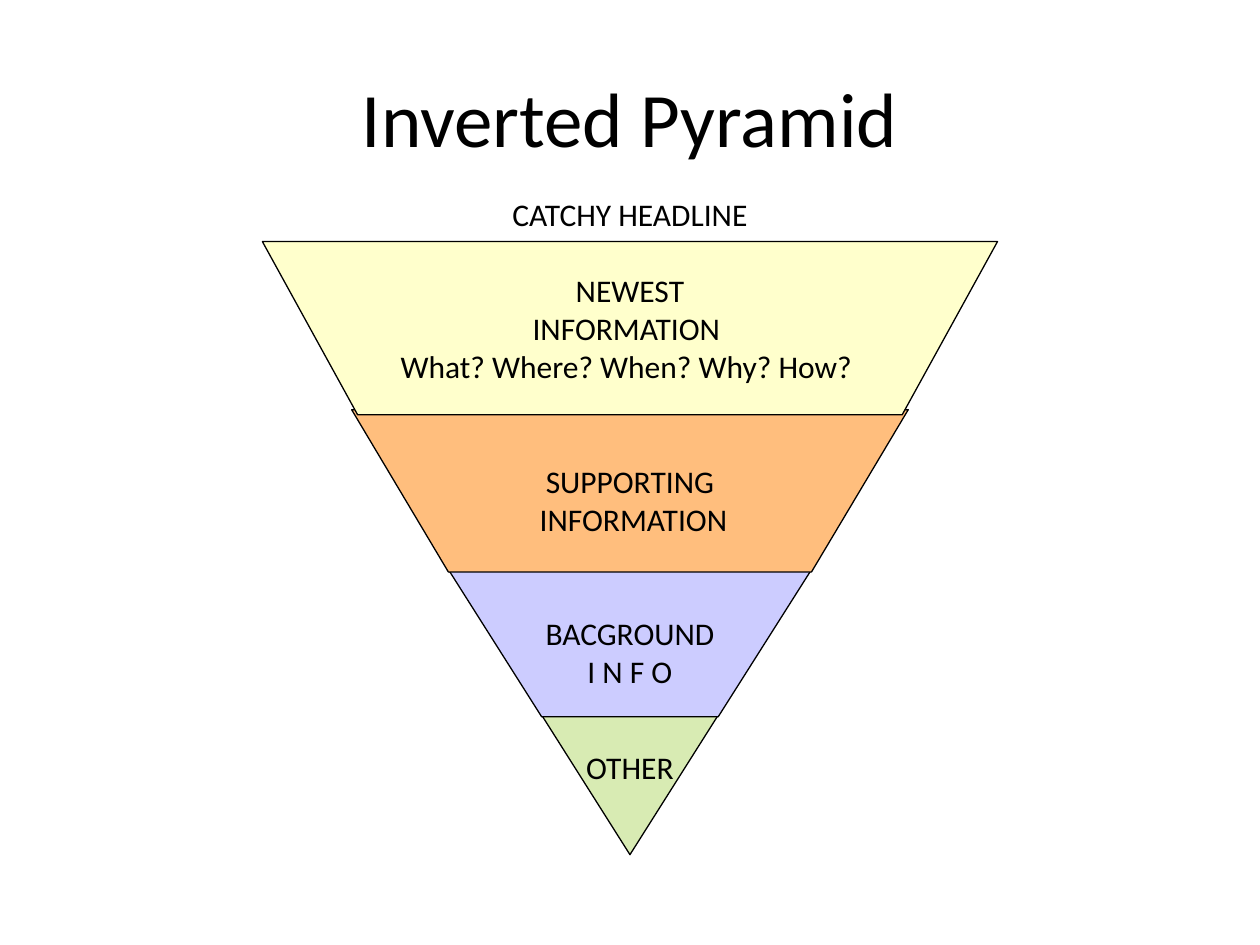
"""Build the Inverted Pyramid slide: four stacked bands under a headline."""
from dataclasses import dataclass

import pptx
import pptx.dml.color
import pptx.enum.text
import pptx.util

Cm = pptx.util.Cm
Pt = pptx.util.Pt
CENTRE = 12.7


@dataclass(frozen=True)
class Band:
    top: float
    bottom: float
    half_top: float
    half_bottom: float
    colour: str


@dataclass(frozen=True)
class Line:
    text: str
    size: float = 18
    gap: float = 0


BANDS = [
    Band(14.4, 17.23, 1.79, 0, "D8EBB3"),
    Band(11.23, 14.45, 3.82, 1.78, "CCCCFF"),
    Band(8.26, 11.53, 5.61, 3.66, "FFBE7D"),
    Band(4.87, 8.36, 7.41, 5.49, "FFFFCC"),
]

LABELS = [
    Line("CATCHY HEADLINE"),
    Line("NEWEST", gap=22),
    Line("INFORMATION "),
    Line("What? Where? When? Why? How? "),
    Line("SUPPORTING", gap=44),
    Line(" INFORMATION"),
    Line("BACGROUND", gap=44),
    Line("I N F O"),
    Line("OTHER", gap=33),
]


def rgb(colour: str) -> pptx.dml.color.RGBColor:
    return pptx.dml.color.RGBColor.from_string(colour)


def draw_band(slide, band: Band) -> None:
    corners = [
        (Cm(CENTRE + offset), Cm(height))
        for offset, height in (
            (-band.half_top, band.top),
            (band.half_top, band.top),
            (band.half_bottom, band.bottom),
            (-band.half_bottom, band.bottom),
        )
    ]
    outline = slide.shapes.build_freeform(*corners[0], scale=1.0)
    outline.add_line_segments(corners[1:], close=True)
    layer = outline.convert_to_shape()
    layer.shadow.inherit = False
    layer.fill.solid()
    layer.fill.fore_color.rgb = rgb(band.colour)
    layer.line.color.rgb = rgb("000000")
    layer.line.width = Pt(0.75)


def draw_text(slide, left: float, top: float, width: float, height: float,
              lines: list[Line], frame_format: dict) -> None:
    frame = slide.shapes.add_textbox(Cm(left), Cm(top), Cm(width), Cm(height)).text_frame
    for name, value in {"word_wrap": True, **frame_format}.items():
        setattr(frame, name, value)
    for index, line in enumerate(lines):
        paragraph = frame.add_paragraph() if index else frame.paragraphs[0]
        paragraph.alignment = pptx.enum.text.PP_ALIGN.CENTER
        if line.gap:
            paragraph.space_before = Pt(line.gap)
        words = paragraph.add_run()
        words.text = line.text
        for name, value in {"name": "Calibri", "size": Pt(line.size)}.items():
            setattr(words.font, name, value)
        words.font.color.rgb = rgb("000000")


def main() -> None:
    deck = pptx.Presentation()
    deck.slide_width, deck.slide_height = Cm(25.4), Cm(19.05)
    slide = deck.slides.add_slide(deck.slide_layouts[6])
    draw_text(slide, 1.27, 0.76, 22.86, 3.18, [Line("Inverted Pyramid", 44)],
              {"vertical_anchor": pptx.enum.text.MSO_ANCHOR.MIDDLE})
    for band in BANDS:
        draw_band(slide, band)
    draw_text(slide, 6.35, 3.81, 12.7, 12.47, LABELS,
              {"auto_size": pptx.enum.text.MSO_AUTO_SIZE.SHAPE_TO_FIT_TEXT})
    deck.save("out.pptx")


if __name__ == "__main__":
    main()
